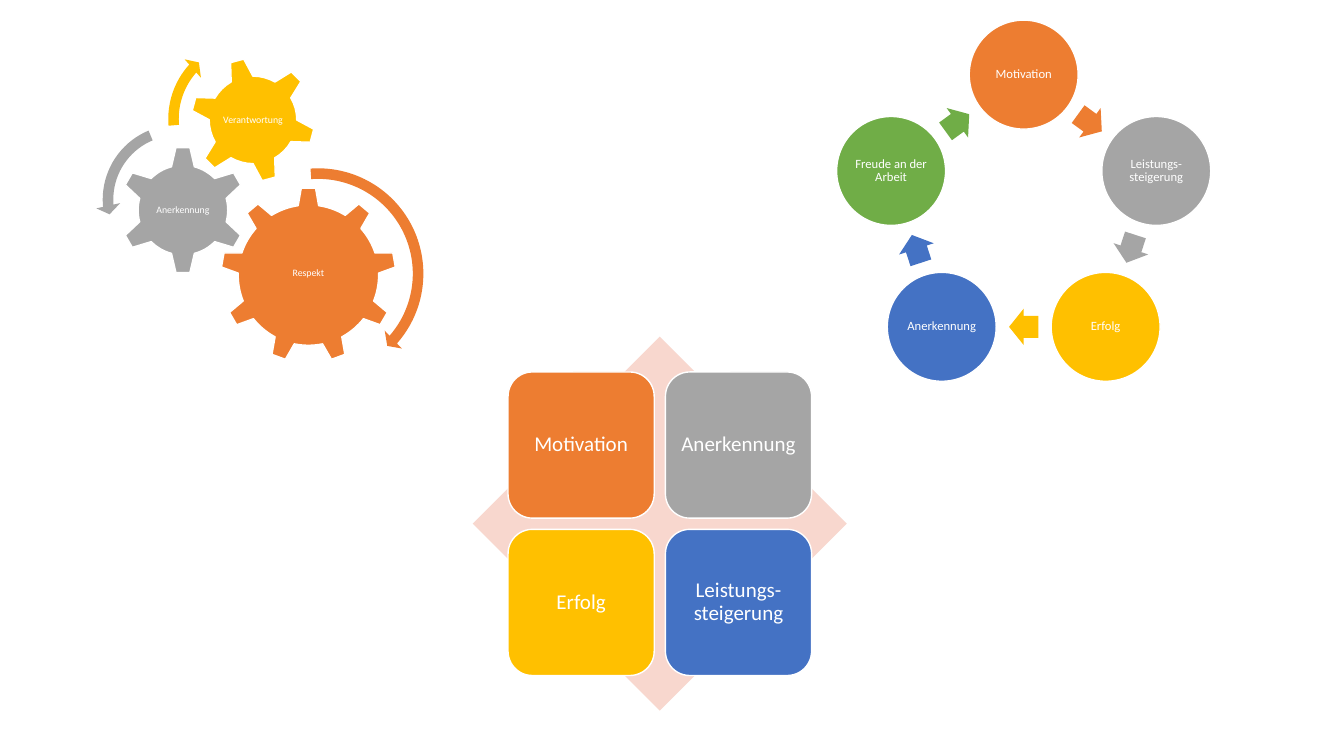
from math import cos, pi, sin

from pptx import Presentation
from pptx.dml.color import RGBColor
from pptx.enum.shapes import MSO_SHAPE
from pptx.enum.text import MSO_ANCHOR, PP_ALIGN
from pptx.util import Pt

ORANGE, GRAY, YELLOW, BLUE, GREEN = "ED7D31", "A5A5A5", "FFC000", "4472C4", "70AD47"
WHITE, PALE_ORANGE = "FFFFFF", "F8D7CE"


def color(hex_string):
    return RGBColor.from_string(hex_string)


def write_text(shape, text, size, inset=0.7, wrap=True):
    frame = shape.text_frame
    frame.word_wrap = wrap
    frame.vertical_anchor = MSO_ANCHOR.MIDDLE
    frame.margin_left = frame.margin_right = Pt(inset)
    frame.margin_top = frame.margin_bottom = Pt(inset)
    paragraph = frame.paragraphs[0]
    paragraph.alignment = PP_ALIGN.CENTER
    paragraph.line_spacing = 0.9
    run = paragraph.add_run()
    run.text = text
    run.font.name = "Calibri"
    run.font.size = Pt(size)
    run.font.color.rgb = color(WHITE)


def add_figure(group, kind, left, top, width, height, fill,
               outlined=False, rotation=0, adjustments=()):
    shape = group.shapes.add_shape(kind, Pt(left), Pt(top), Pt(width), Pt(height))
    shape.shadow.inherit = False
    shape.fill.solid()
    shape.fill.fore_color.rgb = color(fill)
    if outlined:
        shape.line.color.rgb = color(WHITE)
        shape.line.width = Pt(1)
    else:
        shape.line.fill.background()
    shape.rotation = rotation
    for index, value in enumerate(adjustments):
        shape.adjustments[index] = value
    return shape


def draw_gears(slide, left, top):
    group = slide.shapes.add_group_shape()
    gears = [
        ("Respekt", MSO_SHAPE.GEAR_9, 89.3, 111.6, 125.3, ORANGE, 0),
        ("Anerkennung", MSO_SHAPE.GEAR_6, 16.6, 82.1, 91.4, GRAY, 0),
        ("Verantwortung", MSO_SHAPE.GEAR_6, 67.7, 18.7, 89.3, YELLOW, 345),
    ]
    for text, kind, x, y, size, fill, rotation in gears:
        holder = add_figure(group, kind, left + x, top + y, size, size, fill,
                            outlined=True, rotation=rotation)
        if rotation:
            holder = group.shapes.add_textbox(Pt(left + x), Pt(top + y), Pt(size), Pt(size))
        write_text(holder, text, 7, wrap=False)

    arrows = [
        (MSO_SHAPE.CIRCULAR_ARROW, 78.5, 92.9, 160.6, ORANGE,
         (0.047, 2.99, 24.741, 159.551, 0.055)),
        (MSO_SHAPE.LEFT_CIRCULAR_ARROW, 0, 61.9, 116.6, GRAY,
         (0.065, 4.3, 104.891, 148.378, 0.075)),
        (MSO_SHAPE.CIRCULAR_ARROW, 46.8, 0, 125.3, YELLOW,
         (0.06, 3.941, 133.138, 105.082, 0.07)),
    ]
    for kind, x, y, size, fill, adjustments in arrows:
        add_figure(group, kind, left + x, top + y, size, size, fill, adjustments=adjustments)


def draw_cycle(slide, left, top, width):
    group = slide.shapes.add_group_shape()
    steps = [
        ("Motivation", ORANGE),
        ("Leistungs-steigerung", GRAY),
        ("Erfolg", YELLOW),
        ("Anerkennung", BLUE),
        ("Freude an der Arbeit", GREEN),
    ]
    circle, arrow_width, arrow_height = 77.8, 20.9, 26
    turn = 2 * pi / len(steps)
    radius = (width - circle) / 2 / sin(turn)
    arrow_radius = radius * cos(turn / 2)
    center_x = left + width / 2
    center_y = top + circle / 2 + radius
    for index, (text, fill) in enumerate(steps):
        angle = index * turn
        x = center_x + radius * sin(angle)
        y = center_y - radius * cos(angle)
        disc = add_figure(group, MSO_SHAPE.OVAL, x - circle / 2, y - circle / 2,
                          circle, circle, fill, outlined=True)
        write_text(disc, text, 9)
        middle = angle + turn / 2
        x = center_x + arrow_radius * sin(middle)
        y = center_y - arrow_radius * cos(middle)
        add_figure(group, MSO_SHAPE.RIGHT_ARROW, x - arrow_width / 2, y - arrow_height / 2,
                   arrow_width, arrow_height, fill,
                   rotation=36 + 72 * index, adjustments=(0.6, 0.5))


def draw_matrix(slide, left, top, size):
    group = slide.shapes.add_group_shape()
    add_figure(group, MSO_SHAPE.DIAMOND, left, top, size, size, PALE_ORANGE)
    tiles = [
        ("Motivation", ORANGE),
        ("Anerkennung", GRAY),
        ("Erfolg", YELLOW),
        ("Leistungs-steigerung", BLUE),
    ]
    tile, gap = 104.4, 8
    margin = (size - 2 * tile - gap) / 2
    for index, (text, fill) in enumerate(tiles):
        row, column = divmod(index, 2)
        box = add_figure(group, MSO_SHAPE.ROUNDED_RECTANGLE,
                         left + margin + column * (tile + gap),
                         top + margin + row * (tile + gap),
                         tile, tile, fill, outlined=True)
        write_text(box, text, 15, inset=4.3)


def main():
    presentation = Presentation()
    presentation.slide_width = Pt(960)
    presentation.slide_height = Pt(540)
    slide = presentation.slides.add_slide(presentation.slide_layouts[6])
    draw_gears(slide, 68.4, 22.3)
    draw_cycle(slide, 597.6, 14.4, 267.2)
    draw_matrix(slide, 337.7, 240.5, 267.2)
    presentation.save("out.pptx")


if __name__ == "__main__":
    main()
